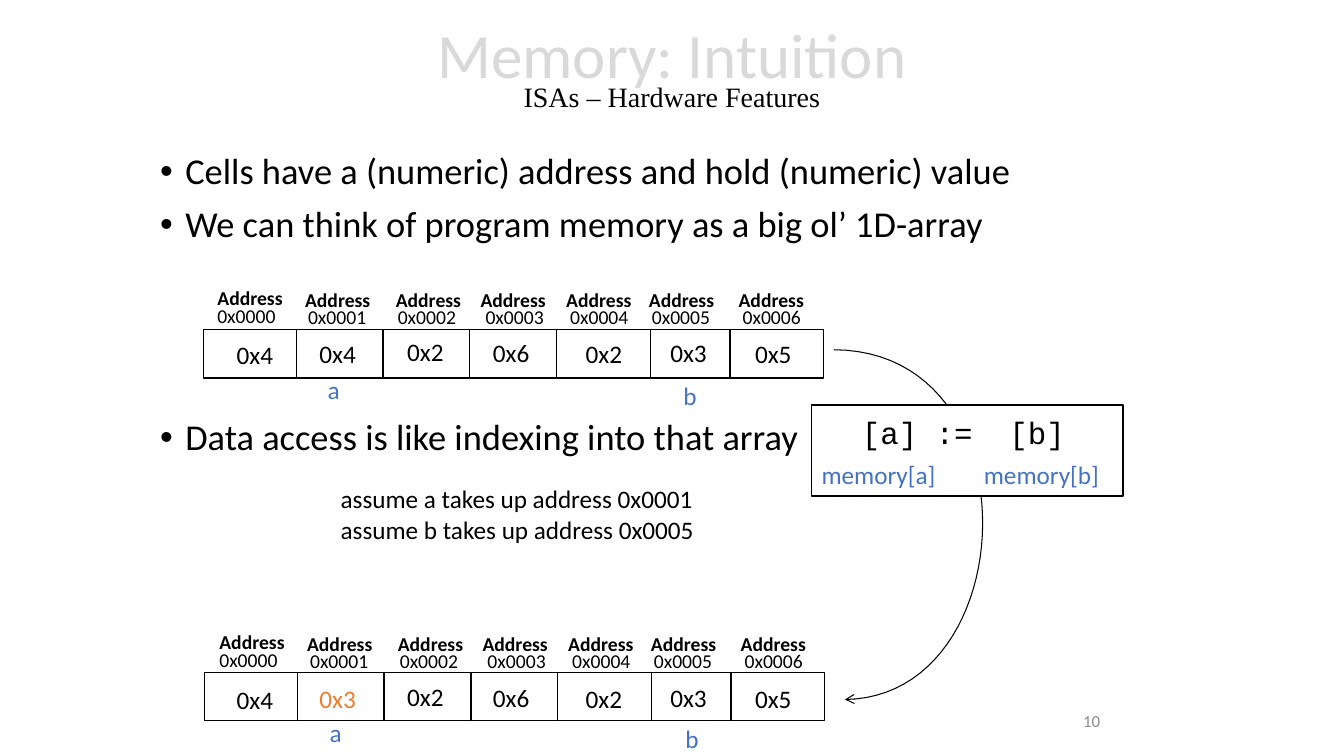
"""Build a slide that explains program memory as a one-dimensional array."""
from lxml import etree
from pptx import Presentation
from pptx import util as u
from pptx.dml.color import RGBColor
from pptx.enum import shapes, text
from pptx.oxml.ns import qn

WIDTH, HEIGHT = 13.33, 7.5
BLACK = RGBColor(0x00, 0x00, 0x00)
WHITE = RGBColor(0xFF, 0xFF, 0xFF)
PALE = RGBColor(0xD9, 0xD9, 0xD9)
GREY = RGBColor(0x8C, 0x8C, 0x8C)
BLUE = RGBColor(0x44, 0x72, 0xC4)
ORANGE = RGBColor(0xED, 0x7D, 0x31)

TITLE = "Memory: Intuition"
SUBTITLE = "ISAs – Hardware Features"
BULLETS = [
    ("Cells have a (numeric) address and hold (numeric) value", 10),
    ("We can think of program memory as a big ol’ 1D-array", 10),
    ("Data access is like indexing into that array", 124),
]
ASSUMPTIONS = ["assume a takes up address 0x0001", "assume b takes up address 0x0005"]
ASSIGNMENT = "[a] :=  [b]"
OPERANDS = [("memory[a]", 8.05, 1.47), ("memory[b]", 9.66, 1.49)]
PAGE = "10"

ADDRESSES = [f"0x{number:04d}" for number in range(7)]
CELL_LEFTS = [2.02, 2.94, 3.8, 4.66, 5.52, 6.41, 7.24]
HEADING_SPOTS = [(2.09, 2.79)] + [(left, 2.81) for left in (2.96, 3.86, 4.7, 5.55, 6.37, 7.26)]
ADDRESS_SPOTS = [(2.13, 2.97)] + [(left, 2.98) for left in (3.03, 3.92, 4.79, 5.63, 6.44, 7.34)]
VALUE_SPOTS = [(2.25, 3.32), (3.07, 3.31), (3.94, 3.29), (4.79, 3.3),
               (5.71, 3.31), (6.55, 3.3), (7.39, 3.31)]
VARIABLES = [("a", 3.15, 3.66, 0.32), ("b", 6.68, 3.72, 0.34)]
DRAW_ORDER = [5, 0, 1, 2, 3, 4, 6]
MEMORY_ROWS = [
    {"values": ["0x4", "0x4", "0x2", "0x6", "0x2", "0x3", "0x5"], "changed": None,
     "cell": (0, 0), "label": (0, 0), "value": (0, 0)},
    {"values": ["0x4", "0x3", "0x2", "0x6", "0x2", "0x3", "0x5"], "changed": 1,
     "cell": (0.01, 3.4), "label": (0.02, 3.41), "value": (0, 3.42)},
]
CURVE = [(8.27, 3.47), (10.29, 3.48), (10.15, 6.92), (8.38, 6.94)]
CURVE_STEPS = 48


def box(left, top, width, height):
    return [u.Inches(length) for length in (left, top, width, height)]


def shifted(spot, shift, width, height):
    return spot[0] + shift[0], spot[1] + shift[1], width, height


def style_run(run, size, font="Calibri", color=BLACK, bold=False):
    run.font.size = u.Pt(size)
    run.font.name = font
    run.font.color.rgb = color
    run.font.bold = bold


def add_text(parent, lines, place, size=18, font="Calibri", color=BLACK, bold=False,
             align=text.PP_ALIGN.LEFT, anchor=text.MSO_ANCHOR.TOP, wrap=False,
             side_inset=0.1, grow=True, spacing=None):
    shape = parent.add_textbox(*box(*place))
    frame = shape.text_frame
    frame.word_wrap = wrap
    frame.auto_size = text.MSO_AUTO_SIZE.SHAPE_TO_FIT_TEXT if grow else text.MSO_AUTO_SIZE.NONE
    frame.vertical_anchor = anchor
    frame.margin_left = frame.margin_right = u.Inches(side_inset)
    for index, line in enumerate([lines] if isinstance(lines, str) else lines):
        paragraph = frame.add_paragraph() if index else frame.paragraphs[0]
        paragraph.alignment = align
        paragraph.line_spacing = spacing
        run = paragraph.add_run()
        run.text = line
        style_run(run, size, font, color, bold)
    return frame


def add_box(parent, place):
    shape = parent.add_shape(shapes.MSO_SHAPE.RECTANGLE, *box(*place))
    shape.shadow.inherit = False
    shape.fill.solid()
    shape.fill.fore_color.rgb = WHITE
    shape.line.color.rgb = BLACK
    shape.line.width = u.Pt(1)


def curve_point(t):
    weights = ((1 - t) ** 3, 3 * t * (1 - t) ** 2, 3 * t ** 2 * (1 - t), t ** 3)
    return tuple(u.Inches(sum(weight * point[axis] for weight, point in zip(weights, CURVE)))
                 for axis in (0, 1))


def add_curved_arrow(parent):
    points = [curve_point(step / CURVE_STEPS) for step in range(CURVE_STEPS + 1)]
    builder = parent.build_freeform(*points[0], scale=1.0)
    builder.add_line_segments(points[1:], close=False)
    arrow = builder.convert_to_shape()
    arrow.shadow.inherit = False
    arrow.fill.background()
    arrow.line.color.rgb = BLACK
    arrow.line.width = u.Pt(0.75)
    etree.SubElement(arrow.line._get_or_add_ln(), qn("a:tailEnd"), type="arrow")


def add_bullets(parent):
    frame = add_text(parent, [line for line, _ in BULLETS], (1.49, 1.47, 10.94, 5.67),
                     size=26, wrap=True, grow=False, spacing=0.9)
    for paragraph, (_, space) in zip(frame.paragraphs, BULLETS):
        paragraph.space_before = u.Pt(space)
        properties = paragraph._p.get_or_add_pPr()
        properties.set("marL", str(u.Inches(0.25)))
        properties.set("indent", str(-u.Inches(0.25)))
        etree.SubElement(properties, qn("a:buFont"), typeface="Arial")
        etree.SubElement(properties, qn("a:buChar"), char="•")


def add_memory_row(parent, row):
    group = parent.add_group_shape().shapes
    for column in DRAW_ORDER:
        add_box(group, shifted((CELL_LEFTS[column], 3.27), row["cell"], 0.93, 0.48))
    caption = {"size": 14, "align": text.PP_ALIGN.CENTER, "wrap": True, "side_inset": 0}
    for column, value in enumerate(row["values"]):
        add_text(group, ADDRESSES[column],
                 shifted(ADDRESS_SPOTS[column], row["label"], 0.63, 0.35), **caption)
        add_text(group, "Address",
                 shifted(HEADING_SPOTS[column], row["label"], 0.78, 0.34), bold=True, **caption)
        add_text(group, value, shifted(VALUE_SPOTS[column], row["value"], 0.57, 0.4),
                 color=ORANGE if column == row["changed"] else BLACK)
    for name, left, top, width in VARIABLES:
        add_text(group, name, shifted((left, top), row["label"], width, 0.4), color=BLUE)


def main():
    presentation = Presentation()
    presentation.slide_width, presentation.slide_height = u.Inches(WIDTH), u.Inches(HEIGHT)
    slide = presentation.slides.add_slide(presentation.slide_layouts[6])
    parent = slide.shapes

    add_curved_arrow(parent)
    add_box(parent, (8.05, 4.02, 3.09, 0.9))
    title = add_text(parent, TITLE, (0, 0.01, WIDTH, 1.45), size=45, color=PALE,
                     align=text.PP_ALIGN.CENTER, anchor=text.MSO_ANCHOR.MIDDLE,
                     wrap=True, grow=False, spacing=0.7).paragraphs[0]
    title.add_line_break()
    subtitle = title.add_run()
    subtitle.text = SUBTITLE
    style_run(subtitle, 20, "Times New Roman")
    add_bullets(parent)
    add_text(parent, PAGE, (8.01, 6.95, 3, 0.4), size=12, color=GREY, wrap=True, grow=False,
             align=text.PP_ALIGN.RIGHT, anchor=text.MSO_ANCHOR.MIDDLE)
    add_text(parent, ASSIGNMENT, (8.45, 4.06, 2.25, 0.47), size=22, font="Courier New")
    for operand, left, width in OPERANDS:
        add_text(parent, operand, (left, 4.51, width, 0.4), color=BLUE)
    for row in MEMORY_ROWS:
        add_memory_row(parent, row)
    add_text(parent, ASSUMPTIONS, (3.28, 4.75, 3.73, 0.71))
    presentation.save("out.pptx")


if __name__ == "__main__":
    main()
